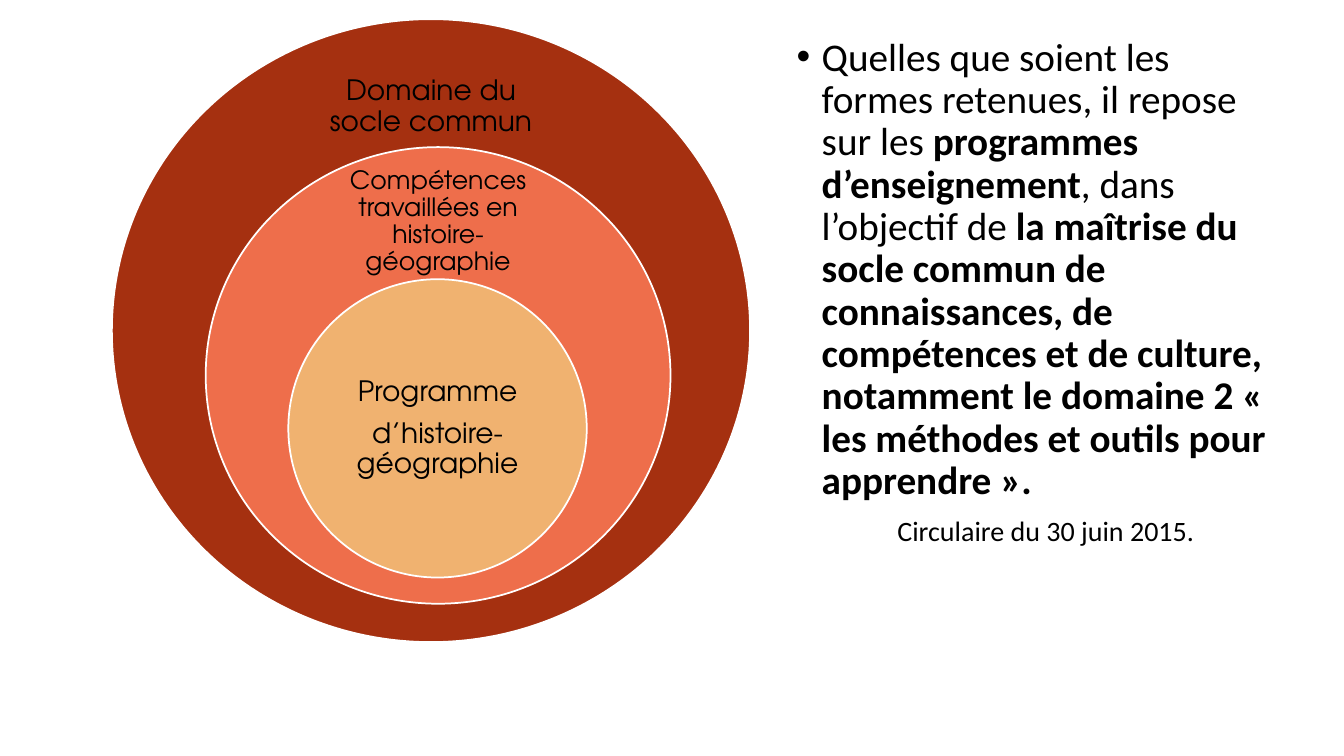
from lxml.etree import SubElement
from pptx import Presentation
from pptx.dml.color import RGBColor
from pptx.enum.shapes import MSO_SHAPE
from pptx.enum.text import MSO_ANCHOR, MSO_AUTO_SIZE, PP_ALIGN
from pptx.oxml.ns import qn
from pptx.util import Inches, Pt

COLOURS = {
    "domain": "A53010",
    "skills": "EE6E4B",
    "programme": "F0B270",
    "outline": "FFFFFF",
    "text": "000000",
}

# Each disc: colour, box in the diagram, label box in the disc, size, paragraphs
DISCS = [
    ("domain", (0, 0, 6.33, 6.18), (2.03, 0.4, 2.27, 0.94), 20,
     ["Domaine du socle commun"]),
    ("skills", (0.93, 1.27, 4.61, 4.53), (1.29, 0.2, 2.03, 1.08), 18,
     ["Compétences travaillées en histoire-géographie"]),
    ("programme", (1.75, 2.58, 2.96, 2.96), (0.54, 0.84, 1.88, 1.28), 20,
     ["Programme", "d’histoire-géographie"]),
]

# Runs of the quotation: text, bold
QUOTATION = [
    ("Quelles que soient les formes retenues, il repose sur les ", False),
    ("programmes d’enseignement", True),
    (", dans l’objectif de ", False),
    ("la maîtrise du socle commun de connaissances, de compétences et de "
     "culture, notamment le domaine 2 « les méthodes et outils pour "
     "apprendre ».", True),
]
REFERENCE = [("Circulaire du 30 juin 2015.", False)]


def apply(target, values):
    for name, value in values.items():
        setattr(target, name, value)


def add_span(para, text, font, size, bold=False):
    span = para.add_run()
    span.text = text
    apply(span.font, {"name": font, "size": Pt(size), "bold": bold})
    span.font.color.rgb = RGBColor.from_string(COLOURS["text"])


def indent(para, margin, first, bullet=None):
    properties = para._p.get_or_add_pPr()
    properties.set("marL", str(Inches(margin)))
    properties.set("indent", str(Inches(first)))
    if bullet:
        SubElement(properties, qn("a:buFont"), typeface="Arial")
        SubElement(properties, qn("a:buChar"), char=bullet)
    else:
        SubElement(properties, qn("a:buNone"))


def add_label(page, left, top, width, height, size, lines):
    box = page.shapes.add_textbox(
        Inches(left), Inches(top), Inches(width), Inches(height))
    frame = box.text_frame
    apply(frame, {
        "word_wrap": True, "vertical_anchor": MSO_ANCHOR.MIDDLE,
        "margin_left": 0, "margin_right": 0,
        "margin_top": 0, "margin_bottom": 0,
    })
    for number, line in enumerate(lines):
        para = frame.add_paragraph() if number else frame.paragraphs[0]
        apply(para, {"alignment": PP_ALIGN.CENTER, "line_spacing": 0.9,
                     "space_after": Pt(8)})
        add_span(para, line, "TeX Gyre Adventor", size)


# Nested discs, from the widest to the narrowest
def add_diagram(page, left, top):
    for colour, (x, y, width, height), label, size, lines in DISCS:
        disc_left, disc_top = left + x, top + y
        disc = page.shapes.add_shape(
            MSO_SHAPE.OVAL, Inches(disc_left), Inches(disc_top),
            Inches(width), Inches(height))
        disc.shadow.inherit = False
        disc.fill.solid()
        disc.fill.fore_color.rgb = RGBColor.from_string(COLOURS[colour])
        disc.line.color.rgb = RGBColor.from_string(COLOURS["outline"])
        disc.line.width = Pt(1.25)
        label_x, label_y, label_width, label_height = label
        add_label(page, disc_left + label_x, disc_top + label_y,
                  label_width, label_height, size, lines)


# Quotation and its reference in the body placeholder
def fill_body(body, left, top, width, height):
    apply(body, {"left": Inches(left), "top": Inches(top),
                 "width": Inches(width), "height": Inches(height)})
    frame = body.text_frame
    apply(frame, {"word_wrap": True, "auto_size": MSO_AUTO_SIZE.NONE,
                  "vertical_anchor": MSO_ANCHOR.TOP})
    quotation, reference = frame.paragraphs[0], frame.add_paragraph()
    for para, spans, size in ((quotation, QUOTATION, 28),
                              (reference, REFERENCE, 20)):
        apply(para, {"line_spacing": 0.9, "space_before": Pt(10)})
        for text, bold in spans:
            add_span(para, text, "Calibri", size, bold)
    indent(quotation, 0.25, -0.25, "•")
    indent(reference, 1, 0)


def main():
    deck = Presentation()
    apply(deck, {"slide_width": Inches(13.33), "slide_height": Inches(7.5)})
    page = deck.slides.add_slide(deck.slide_layouts[1])
    title = page.shapes.title
    title.element.getparent().remove(title.element)
    fill_body(page.placeholders[1], 7.8, 0.32, 5.07, 6.8)
    add_diagram(page, 1.11, 0.19)
    deck.save("out.pptx")


if __name__ == "__main__":
    main()
